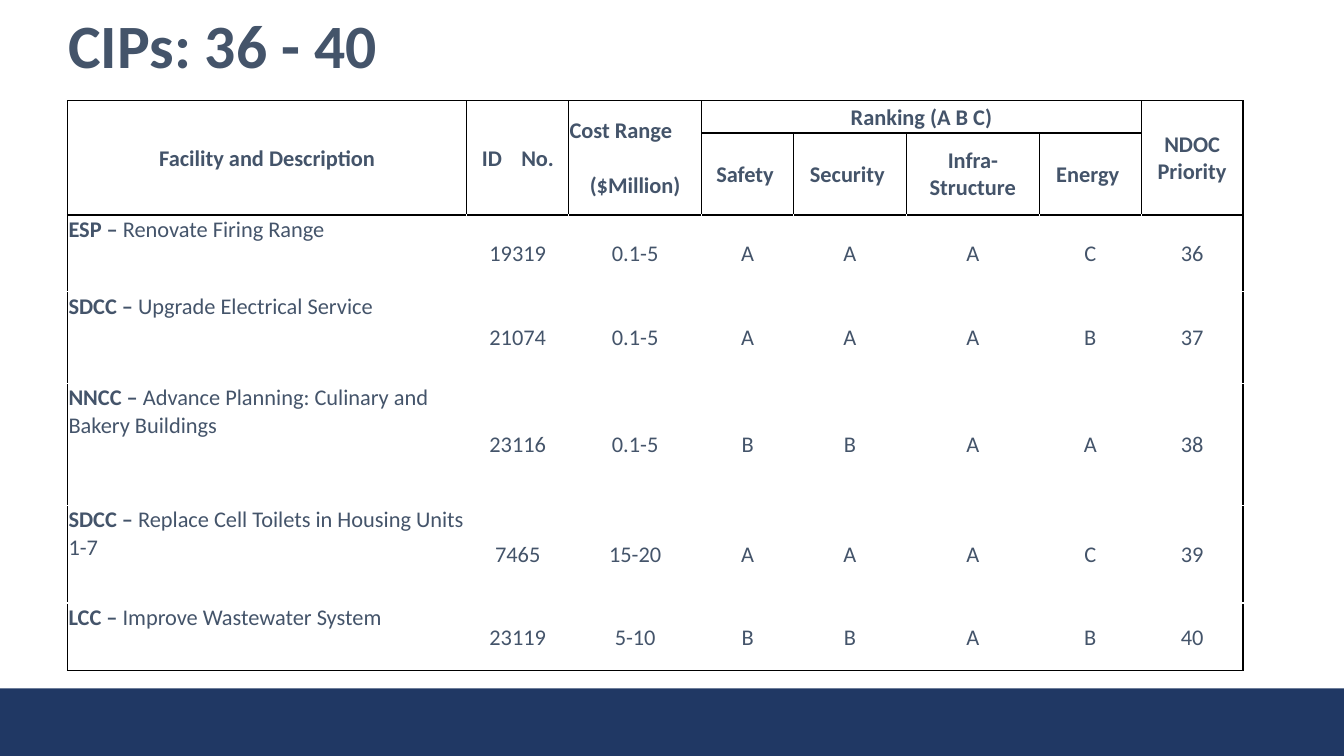
from lxml import etree
from pptx import Presentation
from pptx import util as u
from pptx.dml.color import RGBColor
from pptx.enum import shapes, text
from pptx.oxml.ns import qn

COLORS = {"text": "44546A", "band": "203864", "line": "000000", "blank": "FFFFFF"}
COLS = [3.96, 1.01, 1.32, 0.91, 1.12, 1.32, 1.01, 1.01]
ROWS = [0.32, 0.66, 0.76, 0.91, 1.21, 0.97, 0.67]
HEADERS = [
    (0, 0, 1, 0, "Facility and Description"),
    (0, 1, 1, 1, "ID\tNo."),
    (0, 2, 1, 2, "Cost Range\n($Million)"),
    (0, 3, 0, 6, "Ranking (A B C)"),
    (0, 7, 1, 7, "NDOC Priority"),
    (1, 3, 1, 3, "Safety "),
    (1, 4, 1, 4, "Security "),
    (1, 5, 1, 5, "Infra-Structure"),
    (1, 6, 1, 6, "Energy "),
]
PROJECTS = [
    ("ESP – ", "Renovate Firing Range", "19319", "0.1-5", "AAAC", "36"),
    ("SDCC – ", "Upgrade Electrical Service", "21074", "0.1-5", "AAAB", "37"),
    ("NNCC – ", "Advance Planning: Culinary and Bakery Buildings",
     "23116", "0.1-5", "BBAA", "38"),
    ("SDCC – ", "Replace Cell Toilets in Housing Units 1-7",
     "7465", "15-20", "AAAC", "39"),
    ("LCC – ", "Improve Wastewater System", "23119", "5-10", "BBAB", "40"),
]
CELL = {"margin_left": u.Inches(0.01), "margin_right": u.Inches(0.01),
        "margin_top": u.Inches(0.01), "margin_bottom": 0}
CENTER, LEFT = text.PP_ALIGN.CENTER, text.PP_ALIGN.LEFT
MIDDLE, TOP = text.MSO_ANCHOR.MIDDLE, text.MSO_ANCHOR.TOP


def rgb(name):
    return RGBColor.from_string(COLORS[name])


def apply(obj, fmt):
    for name, value in fmt.items():
        setattr(obj, name, value)


def add_run(p, words, size=16, bold=False):
    r = p.add_run()
    r.text = words
    apply(r.font, {"name": "Calibri", "size": u.Pt(size), "bold": bold})
    r.font.color.rgb = rgb("text")


def set_borders(cell, sides):
    tcPr = cell._tc.get_or_add_tcPr()
    for i, side in enumerate("LRTB"):
        ln = etree.Element(qn("a:ln" + side), w=str(u.Pt(1)))
        fill = etree.SubElement(ln, qn("a:solidFill"))
        color = "line" if side in sides else "blank"
        etree.SubElement(fill, qn("a:srgbClr"), val=COLORS[color])
        tcPr.insert(i, ln)


def add_tab(p, position):
    tabs = etree.SubElement(p._p.get_or_add_pPr(), qn("a:tabLst"))
    etree.SubElement(tabs, qn("a:tab"), pos=str(u.Inches(position)), algn="l")


def fill_header(tbl):
    for top, left, bottom, right, words in HEADERS:
        cell = tbl.cell(top, left)
        if (top, left) != (bottom, right):
            cell.merge(tbl.cell(bottom, right))
        tf = cell.text_frame
        for i, line in enumerate(words.split("\n")):
            p = tf.add_paragraph() if i else tf.paragraphs[0]
            p.alignment = CENTER
            if i:
                p.space_before = u.Pt(19.5)
                tf.paragraphs[0].alignment = LEFT
            if "\t" in line:
                cell.margin_left = u.Inches(0.15)
                add_tab(p, 0.39)
                p.alignment = LEFT
            add_run(p, line, bold=True)


def fill_projects(tbl):
    for row, (site, work, number, cost, ranks, priority) in enumerate(PROJECTS, 2):
        cell = tbl.cell(row, 0)
        cell.vertical_anchor = TOP
        p = cell.text_frame.paragraphs[0]
        add_run(p, site, bold=True)
        add_run(p, work)
        for col, words in enumerate([number, cost, *ranks, priority], 1):
            p = tbl.cell(row, col).text_frame.paragraphs[0]
            p.alignment = CENTER
            add_run(p, words)


def body_sides(row, col):
    edges = {"L": col == 0, "R": col == len(COLS) - 1,
             "T": row == 2, "B": row == len(ROWS) - 1}
    return [side for side, shown in edges.items() if shown]


def add_projects(s, x, y, w, h):
    tbl = s.shapes.add_table(len(ROWS), len(COLS), u.Inches(x), u.Inches(y),
                             u.Inches(w), u.Inches(h)).table
    apply(tbl, {"first_row": False, "horz_banding": False})
    for col, width in zip(tbl.columns, COLS):
        col.width = u.Inches(width)
    for row, height in zip(tbl.rows, ROWS):
        row.height = u.Inches(height)
    for row in range(len(ROWS)):
        for col in range(len(COLS)):
            cell = tbl.cell(row, col)
            apply(cell, {**CELL, "vertical_anchor": MIDDLE})
            cell.fill.background()
            set_borders(cell, "LRTB" if row < 2 else body_sides(row, col))
    fill_header(tbl)
    fill_projects(tbl)


def add_title(s, x, y, w, h):
    tf = s.shapes.add_textbox(*map(u.Inches, (x, y, w, h))).text_frame
    apply(tf, {"word_wrap": True, "vertical_anchor": MIDDLE})
    p = tf.paragraphs[0]
    p.line_spacing = 0.9
    add_run(p, "CIPs: 36 - 40", 44, True)


def add_band(s, x, y, w, h):
    sp = s.shapes.add_shape(shapes.MSO_SHAPE.RECTANGLE,
                            *map(u.Inches, (x, y, w, h)))
    sp.shadow.inherit = False
    sp.fill.solid()
    sp.fill.fore_color.rgb = rgb("band")
    sp.line.fill.background()


def main():
    prs = Presentation()
    apply(prs, {"slide_width": u.Inches(13.33), "slide_height": u.Inches(7.5)})
    s = prs.slides.add_slide(prs.slide_layouts[6])
    add_band(s, 0, 6.83, 13.33, 0.67)
    add_title(s, 0.58, 0.11, 3.42, 0.74)
    add_projects(s, 0.67, 1, sum(COLS), sum(ROWS))
    prs.save("out.pptx")


if __name__ == "__main__":
    main()
